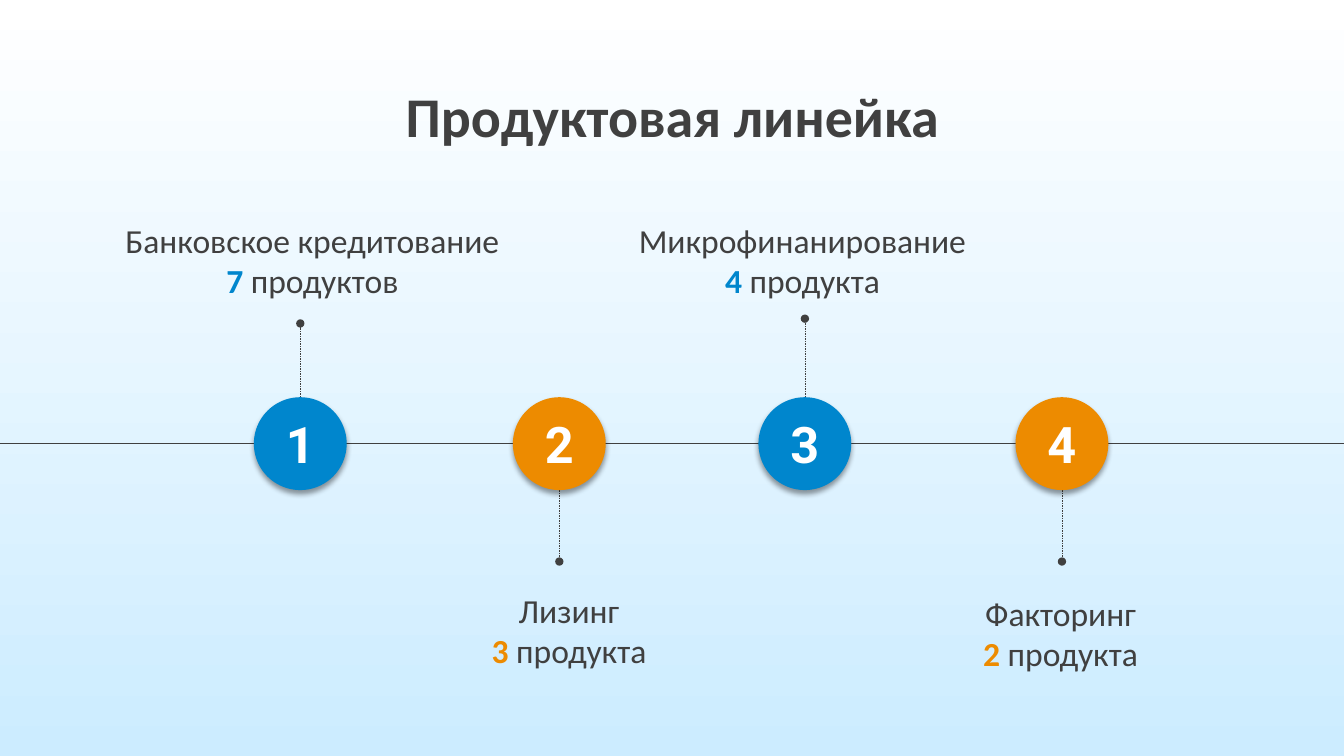
from dataclasses import dataclass

from lxml import etree
from pptx import Presentation
from pptx.dml.color import RGBColor
from pptx.enum.dml import MSO_LINE
from pptx.enum.shapes import MSO_CONNECTOR, MSO_SHAPE
from pptx.enum.text import MSO_ANCHOR, MSO_AUTO_SIZE, PP_ALIGN
from pptx.oxml.ns import qn
from pptx.util import Cm, Pt

CENTER = PP_ALIGN.CENTER
MIDDLE = MSO_ANCHOR.MIDDLE
FIT_SHAPE = MSO_AUTO_SIZE.SHAPE_TO_FIT_TEXT
NO_FIT = MSO_AUTO_SIZE.NONE
STRAIGHT = MSO_CONNECTOR.STRAIGHT
OVAL = MSO_SHAPE.OVAL
DASH = MSO_LINE.DASH

DARK, WHITE, SKY = "404040", "FFFFFF", "CCECFF"
BLUE, ORANGE = "0086CD", "ED8B00"
WIDTH, HEIGHT = 33.88, 19.05
AXIS_Y = 11.18
DIAMETER = 2.34
RADIUS = DIAMETER / 2
LABEL_HEIGHT = 2.31


@dataclass
class Product:
    x: float
    color: str
    stem_end: float
    label_left: float
    label_top: float
    label_width: float
    name: str
    count: str
    unit: str


PRODUCTS = [
    Product(7.57, BLUE, 8.15, 1.93, 5.41, 11.89, "Банковское кредитование", "7", "продуктов"),
    Product(14.1, ORANGE, 14.15, 12.12, 14.73, 4.45, "Лизинг", "3", "продукта"),
    Product(20.29, BLUE, 8.03, 15.8, 5.41, 8.86, "Микрофинанирование", "4", "продукта"),
    Product(26.77, ORANGE, 14.15, 24.51, 14.81, 4.45, "Факторинг", "2", "продукта"),
]


def rgb(value: str) -> RGBColor:
    return RGBColor.from_string(value)


def add_run(p, text: str, size: float, color: str, bold: bool = False, font: str = "Calibri") -> None:
    p.alignment = CENTER
    r = p.add_run()
    r.text = text
    r.font.name = font
    r.font.size = Pt(size)
    r.font.bold = bold
    r.font.color.rgb = rgb(color)


def add_line(s, x1: float, y1: float, x2: float, y2: float, width: float):
    line = s.shapes.add_connector(STRAIGHT, Cm(x1), Cm(y1), Cm(x2), Cm(y2))
    line.line.color.rgb = rgb(DARK)
    line.line.width = Pt(width)
    etree.SubElement(line._element.spPr, qn("a:effectLst"))
    return line


def add_stem(s, product: Product) -> None:
    side = 1 if product.stem_end > AXIS_Y else -1
    stem = add_line(s, product.x, AXIS_Y + side * RADIUS, product.x, product.stem_end, 0.25)
    stem.line.dash_style = DASH
    etree.SubElement(stem.line._get_or_add_ln(), qn("a:tailEnd"), type="oval")


def add_shadow(sp) -> None:
    sp.shadow.inherit = False
    effects = sp._element.spPr.find(qn("a:effectLst"))
    shadow = etree.SubElement(effects, qn("a:outerShdw"), blurRad=str(Pt(4)), dist=str(Pt(3)),
                              dir="5400000", algn="t", rotWithShape="0")
    color = etree.SubElement(shadow, qn("a:srgbClr"), val="000000")
    etree.SubElement(color, qn("a:alpha"), val="40000")


def add_circle(s, product: Product, number: int) -> None:
    sp = s.shapes.add_shape(OVAL, Cm(product.x - RADIUS), Cm(AXIS_Y - RADIUS), Cm(DIAMETER), Cm(DIAMETER))
    sp.fill.solid()
    sp.fill.fore_color.rgb = rgb(product.color)
    sp.line.fill.background()
    add_shadow(sp)
    tf = sp.text_frame
    tf.margin_left = tf.margin_top = tf.margin_right = tf.margin_bottom = 0
    tf.vertical_anchor = MIDDLE
    tf.word_wrap = False
    add_run(tf.paragraphs[0], str(number), 36, WHITE, True, "Roboto")


def add_label(s, product: Product) -> None:
    sp = s.shapes.add_textbox(Cm(product.label_left), Cm(product.label_top),
                              Cm(product.label_width), Cm(LABEL_HEIGHT))
    tf = sp.text_frame
    tf.word_wrap = True
    tf.auto_size = FIT_SHAPE
    add_run(tf.paragraphs[0], product.name, 24, DARK)
    p = tf.add_paragraph()
    add_run(p, product.count, 24, product.color, True)
    add_run(p, f" {product.unit}", 24, DARK)


def add_title(s, text: str) -> None:
    sp = s.shapes.title
    sp.left, sp.top, sp.width, sp.height = Cm(9.91), Cm(1.93), Cm(14.07), Cm(1.96)
    tf = sp.text_frame
    tf.word_wrap = False
    tf.auto_size = NO_FIT
    tf.vertical_anchor = MIDDLE
    add_run(tf.paragraphs[0], text, 40, DARK, True)


def set_background(s) -> None:
    fill = s.background.fill
    fill.gradient()
    fill.gradient_angle = 270
    for stop, color in zip(fill.gradient_stops, (WHITE, SKY)):
        stop.color.rgb = rgb(color)


def main() -> None:
    prs = Presentation()
    prs.slide_width, prs.slide_height = Cm(WIDTH), Cm(HEIGHT)
    s = prs.slides.add_slide(prs.slide_layouts[5])
    set_background(s)
    add_title(s, "Продуктовая линейка")
    add_line(s, 0, AXIS_Y, WIDTH, AXIS_Y, 0.75)
    for number, product in enumerate(PRODUCTS, 1):
        add_stem(s, product)
        add_circle(s, product, number)
        add_label(s, product)
    prs.save("out.pptx")


if __name__ == "__main__":
    main()
